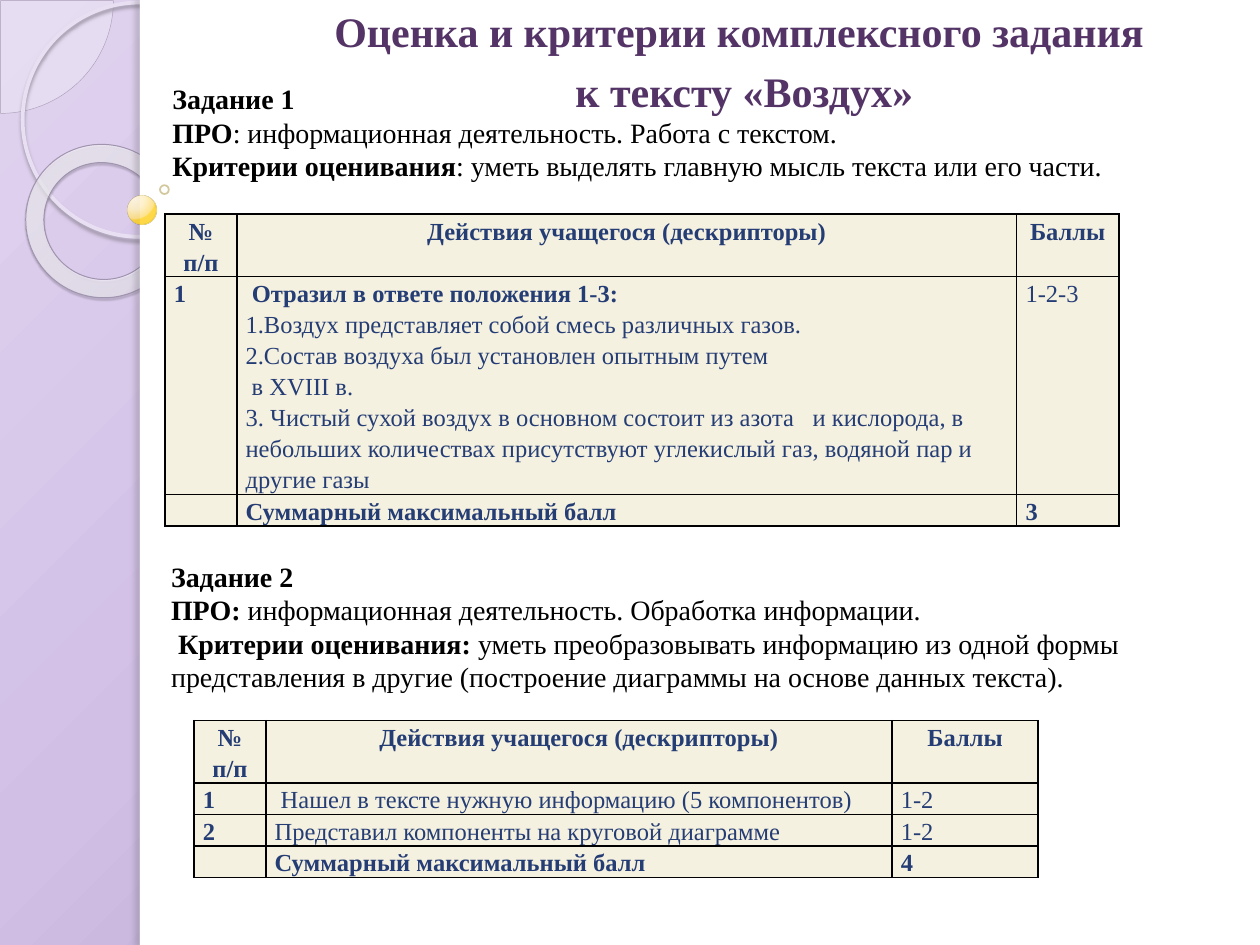
from lxml.etree import SubElement
from pptx import Presentation
from pptx.dml.color import RGBColor
from pptx.enum.shapes import MSO_SHAPE as S
from pptx.enum.text import MSO_ANCHOR, MSO_AUTO_SIZE, PP_ALIGN
from pptx.oxml.ns import qn
from pptx.util import Inches, Pt

TITLE = ["*Оценка и критерии комплексного задания", "* к тексту «Воздух»"]

TASKS = [
    ((1.27, 0.6, 8.5, 0.91), MSO_ANCHOR.TOP, [
        "*Задание 1",
        "*ПРО*: информационная деятельность. Работа с текстом.",
        "*Критерии оценивания*: уметь выделять главную мысль текста или его части.",
    ]),
    ((1.26, 4.38, 8.74, 1.18), MSO_ANCHOR.MIDDLE, [
        "*Задание 2",
        "*ПРО: *информационная деятельность. Обработка информации.",
        " *Критерии оценивания: *уметь преобразовывать информацию из одной формы "
        "представления в другие (построение диаграммы на основе данных текста).",
    ]),
]

HEAD = ["*№ п/п", "*Действия учащегося (дескрипторы)", "*Баллы"]
TOTAL = "*Суммарный максимальный балл"
GRIDS = [
    ((1.31, 1.7), (0.57, 6.19, 0.81), (0.49, 1.73, 0.25), [
        HEAD,
        ["*1",
         " *Отразил в ответе положения 1-3:\n"
         "1.Воздух представляет собой смесь различных газов.\n"
         "2.Состав воздуха был установлен опытным путем\n"
         " в XVIII в.\n"
         "3. Чистый сухой воздух в основном состоит из азота\tи кислорода, "
         "в небольших количествах присутствуют углекислый газ, "
         "водяной пар и другие газы",
         "1-2-3"],
        ["", TOTAL, "*3"],
    ]),
    ((1.54, 5.72), (0.57, 4.97, 1.16), (0.49, 0.25, 0.25, 0.25), [
        HEAD,
        ["*1", " Нашел в тексте нужную информацию (5 компонентов)", "1-2"],
        ["*2", "Представил компоненты на круговой диаграмме", "1-2"],
        ["", TOTAL, "*4"],
    ]),
]

BACK = ([(0, "E0D3EF", 100), (40, "D1BFE6", 100), (100, "9A8AAD", 100)],
        (-24, -20, 124, 120))
RING = ([(0, "F9F7FB", 70), (70, "FCFBFE", 55), (100, "B099CA", 60)],
        (-408, -50, 508, 150))
BALL = ([(0, "FFF7E2", 95), (50, "FFF0C5", 90), (95, "FFE07C", 88), (100, "FFD327", 85)],
        (25, 12, 75, 88))
WHITE = ("FFFFFF", 100)
ART = [
    dict(kind=S.PIE, at=(-0.89, -0.89, 1.79, 1.79), adj=(0, 54.02),
         fill=("F6F4F9", 33), line=("ACA0B9", 100, 0.25)),
    dict(kind=S.OVAL, at=(0.18, 0.02, 1.86, 1.86), line=("E8E0F2", 100, 2.15),
         shade=("958D9D", 85, 2, 2, 90)),
    dict(kind=S.DONUT, at=(0.2, 1.15, 1.23, 1.21), adj=(0.12,), turn=38.6, fill=RING,
         line=("A094AF", 100, 0.58), shade=("4A4550", 35, 1, 1.2, 75)),
    dict(kind=S.RECTANGLE, at=(1.11, 0, 8.89, 7.5), fill=WHITE),
    dict(kind=S.RECTANGLE, at=(1.11, 0, 0.08, 7.5), fill=WHITE,
         shade=("646068", 25, 3, 3, 180)),
    dict(kind=S.OVAL, at=(1.01, 1.55, 0.23, 0.23), fill=BALL, line=("CAB45C", 60, 0.16)),
    dict(kind=S.OVAL, at=(1.27, 1.47, 0.07, 0.07), line=("B6A35A", 60, 1)),
]


def rgb(code):
    return RGBColor.from_string(code)


def node(root, tag, **vals):
    return SubElement(root, qn("a:" + tag), {k: str(v) for k, v in vals.items()})


def tint(root, code, alpha):
    node(node(root, "srgbClr", val=code), "alpha", val=alpha * 1000)


def paint(root, fill):
    if not fill:
        node(root, "noFill")
    elif isinstance(fill[0], str):
        tint(node(root, "solidFill"), *fill)
    else:
        grad = node(root, "gradFill", rotWithShape=1)
        stops = node(grad, "gsLst")
        for pos, code, alpha in fill[0]:
            tint(node(stops, "gs", pos=pos * 1000), code, alpha)
        edges = {k: v * 1000 for k, v in zip("ltrb", fill[1])}
        node(node(grad, "path", path="circle"), "fillToRect", **edges)


def draw(slide, kind, at, adj=(), turn=0, fill=None, line=None, shade=None):
    shape = slide.shapes.add_shape(kind, *map(Inches, at))
    shape.rotation = turn
    for i, val in enumerate(adj):
        shape.adjustments[i] = val
    prop = shape.element.spPr
    paint(prop, fill)
    paint(node(prop, "ln", w=Pt(line[2]) if line else 0), line and line[:2])
    shape.shadow.inherit = False
    if shade:
        code, alpha, blur, dist, angle = shade
        cast = node(prop.find(qn("a:effectLst")), "outerShdw", blurRad=Pt(blur),
                    dist=Pt(dist), dir=angle * 60000, algn="tl", rotWithShape=0)
        tint(cast, code, alpha)


def write(frame, lines, size, code, **form):
    for i, text in enumerate(lines):
        par = frame.paragraphs[0] if i == 0 else frame.add_paragraph()
        for key, val in form.items():
            setattr(par, key, val)
        for j, part in enumerate(text.split("*")):
            if part:
                run = par.add_run()
                run.text = part
                looks = dict(name="Times New Roman", size=Pt(size), bold=j % 2 == 1)
                for key, val in looks.items():
                    setattr(run.font, key, val)
                run.font.color.rgb = rgb(code)
        if not text:
            node(par._p, "endParaRPr", sz=size * 100)


def place(shape, at, **form):
    for key, val in zip(("left", "top", "width", "height"), at):
        setattr(shape, key, Inches(val))
    for key, val in form.items():
        setattr(shape.text_frame, key, val)


def grid(slide, at, cols, rows, cells):
    size = map(Inches, (*at, sum(cols), sum(rows)))
    table = slide.shapes.add_table(len(rows), len(cols), *size).table
    for col, wide in zip(table.columns, cols):
        col.width = Inches(wide)
    for i, (row, high) in enumerate(zip(table.rows, rows)):
        row.height = Inches(high)
        for cell, text in zip(row.cells, cells[i]):
            prop = cell._tc.get_or_add_tcPr()
            for side in "LRTB":
                paint(node(prop, "ln" + side, w=Pt(1)), ("000000", 100))
            cell.fill.solid()
            cell.fill.fore_color.rgb = rgb("F5F1E0")
            form = dict(margin_left=0.07, margin_right=0.07, margin_top=0, margin_bottom=0)
            for key, val in form.items():
                setattr(cell, key, Inches(val))
            write(cell.text_frame, text.split("\n"), 14, "253D75", line_spacing=1.15,
                  alignment=PP_ALIGN.LEFT if i else PP_ALIGN.CENTER)


def main():
    deck = Presentation()
    deck.slide_width, deck.slide_height = Inches(10), Inches(7.5)
    slide = deck.slides.add_slide(deck.slide_layouts[5])
    slide.background.fill.solid()
    prop = slide.element.find(".//" + qn("p:bgPr"))
    prop.remove(prop[0])
    paint(prop, BACK)
    prop.insert(0, prop[-1])
    for item in ART:
        draw(slide, **item)
    title = slide.shapes.title
    slide.shapes._spTree.append(title.element)
    place(title, (1.77, 0.04, 8.19, 0.95), margin_top=0, word_wrap=True,
          vertical_anchor=MSO_ANCHOR.TOP, auto_size=MSO_AUTO_SIZE.NONE)
    write(title.text_frame, TITLE, 24, "543466", alignment=PP_ALIGN.CENTER,
          space_before=Pt(6))
    for item in GRIDS:
        grid(slide, *item)
    for at, side, lines in TASKS:
        box = slide.shapes.add_textbox(0, 0, 0, 0)
        place(box, at, word_wrap=True, vertical_anchor=side)
        write(box.text_frame, lines, 16, "000000")
    deck.save("out.pptx")


if __name__ == "__main__":
    main()
